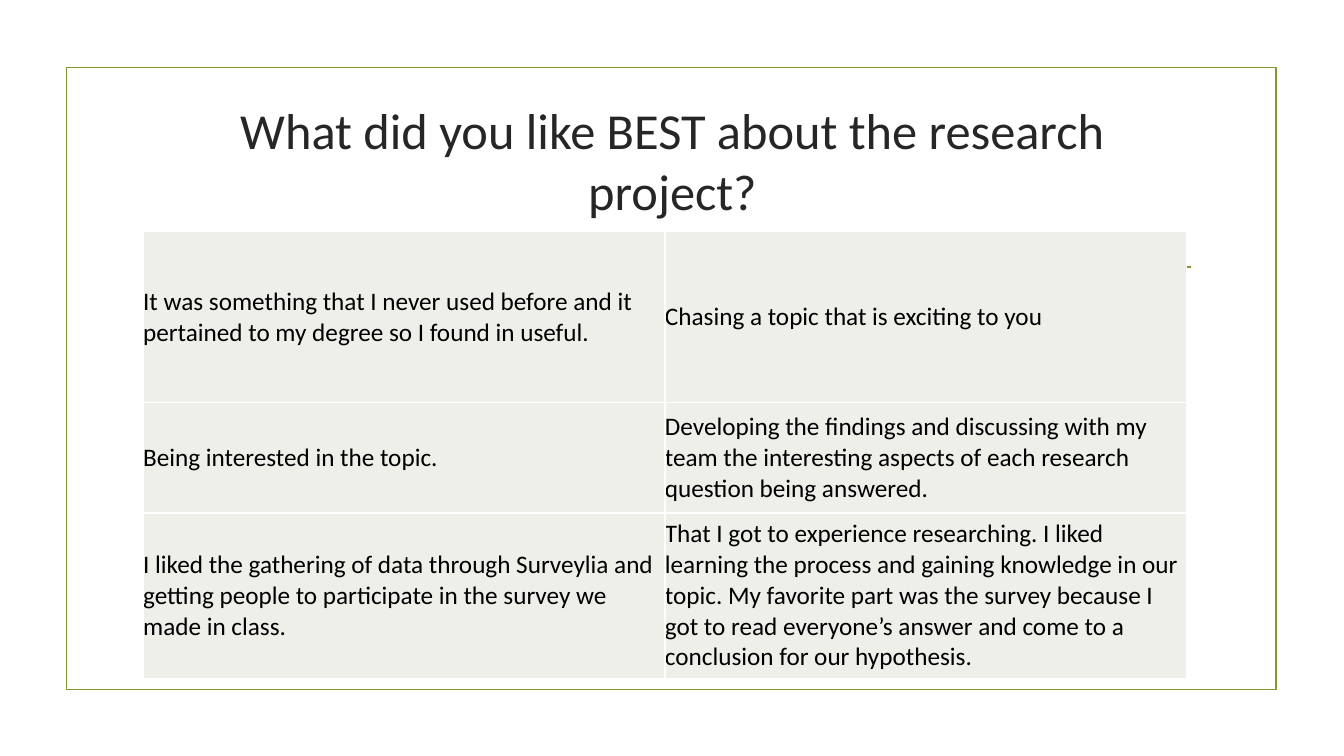
from lxml.etree import SubElement
from pptx import Presentation
from pptx.dml.color import RGBColor
from pptx.enum.shapes import MSO_CONNECTOR, MSO_SHAPE
from pptx.enum.text import MSO_ANCHOR, MSO_AUTO_SIZE, PP_ALIGN
from pptx.oxml.ns import qn
from pptx.util import Inches, Pt

ANSWERS = [
    ("It was something that I never used before and it pertained to my degree so I found in useful.",
     "Chasing a topic that is exciting to you"),
    ("Being interested in the topic.",
     "Developing the findings and discussing with my team the interesting aspects of each "
     "research question being answered."),
    ("I liked the gathering of data through Surveylia and getting people to participate in the "
     "survey we made in class.",
     "That I got to experience researching. I liked learning the process and gaining knowledge "
     "in our topic. My favorite part was the survey because I got to read everyone’s answer and "
     "come to a conclusion for our hypothesis."),
]
ROW_HEIGHTS = (1.69, 1.1, 1.64)


def color(code):
    return RGBColor.from_string(code)


def assign(target, values):
    for name, value in values.items():
        setattr(target, name, value)


class SurveySlide:
    """Draws the elements of one slide in a shared style."""

    FONT = "Calibri"
    OLIVE = "83992A"
    CELL = "EDEFE8"
    MARGINS = dict.fromkeys(("margin_left", "margin_top", "margin_right", "margin_bottom"), 0)

    def __init__(self, slide):
        self.slide = slide
        self.shapes = slide.shapes

    def style_text(self, paragraph, size, code):
        assign(paragraph.font, {"name": self.FONT, "size": Pt(size)})
        paragraph.font.color.rgb = color(code)

    def style_line(self, line):
        line.color.rgb = color(self.OLIVE)
        line.width = Pt(1.25)

    def frame(self, left, top, width, height):
        border = self.shapes.add_shape(
            MSO_SHAPE.RECTANGLE, *map(Inches, (left, top, width, height)))
        border.shadow.inherit = False
        border.fill.background()
        self.style_line(border.line)

    def rule(self, left, right, top):
        divider = self.shapes.add_connector(
            MSO_CONNECTOR.STRAIGHT, *map(Inches, (left, top, right, top)))
        self.style_line(divider.line)
        SubElement(divider._element.spPr, qn("a:effectLst"))

    def title(self, text, left, top, width, height):
        heading = self.shapes.title
        assign(heading, {"left": Inches(left), "top": Inches(top),
                         "width": Inches(width), "height": Inches(height)})
        frame = heading.text_frame
        assign(frame, {"text": text, "word_wrap": True, "auto_size": MSO_AUTO_SIZE.NONE,
                       "vertical_anchor": MSO_ANCHOR.MIDDLE})
        frame.paragraphs[0].alignment = PP_ALIGN.CENTER
        self.style_text(frame.paragraphs[0], 36, "262626")

    def cell(self, cell, text):
        assign(cell, {"text": text, "vertical_anchor": MSO_ANCHOR.MIDDLE, **self.MARGINS})
        for side in ("lnL", "lnR", "lnT", "lnB"):
            edge = SubElement(cell._tc.get_or_add_tcPr(), qn(f"a:{side}"), w=str(Pt(1)))
            SubElement(SubElement(edge, qn("a:solidFill")), qn("a:srgbClr"), val="FFFFFF")
        cell.fill.solid()
        cell.fill.fore_color.rgb = color(self.CELL)
        self.style_text(cell.text_frame.paragraphs[0], 18, "000000")

    def table(self, rows, heights, left, top, width):
        columns = len(rows[0])
        grid = self.shapes.add_table(
            len(rows), columns, *map(Inches, (left, top, width, sum(heights)))).table
        assign(grid, {"first_row": False, "horz_banding": False})
        for column in grid.columns:
            column.width = Inches(width / columns)
        for r, (answers, height) in enumerate(zip(rows, heights)):
            grid.rows[r].height = Inches(height)
            for c, answer in enumerate(answers):
                self.cell(grid.cell(r, c), answer)


def main():
    deck = Presentation()
    assign(deck, {"slide_width": Inches(13.33), "slide_height": Inches(7.5)})
    survey = SurveySlide(deck.slides.add_slide(deck.slide_layouts[5]))
    survey.frame(0.66, 0.67, 12, 6.17)
    survey.rule(1.53, 11.81, 2.65)
    survey.title("What did you like BEST about the research project?", 1.42, 0.87, 10.5, 1.43)
    survey.table(ANSWERS, ROW_HEIGHTS, 1.42, 2.3, 10.35)
    deck.save("out.pptx")


if __name__ == "__main__":
    main()
